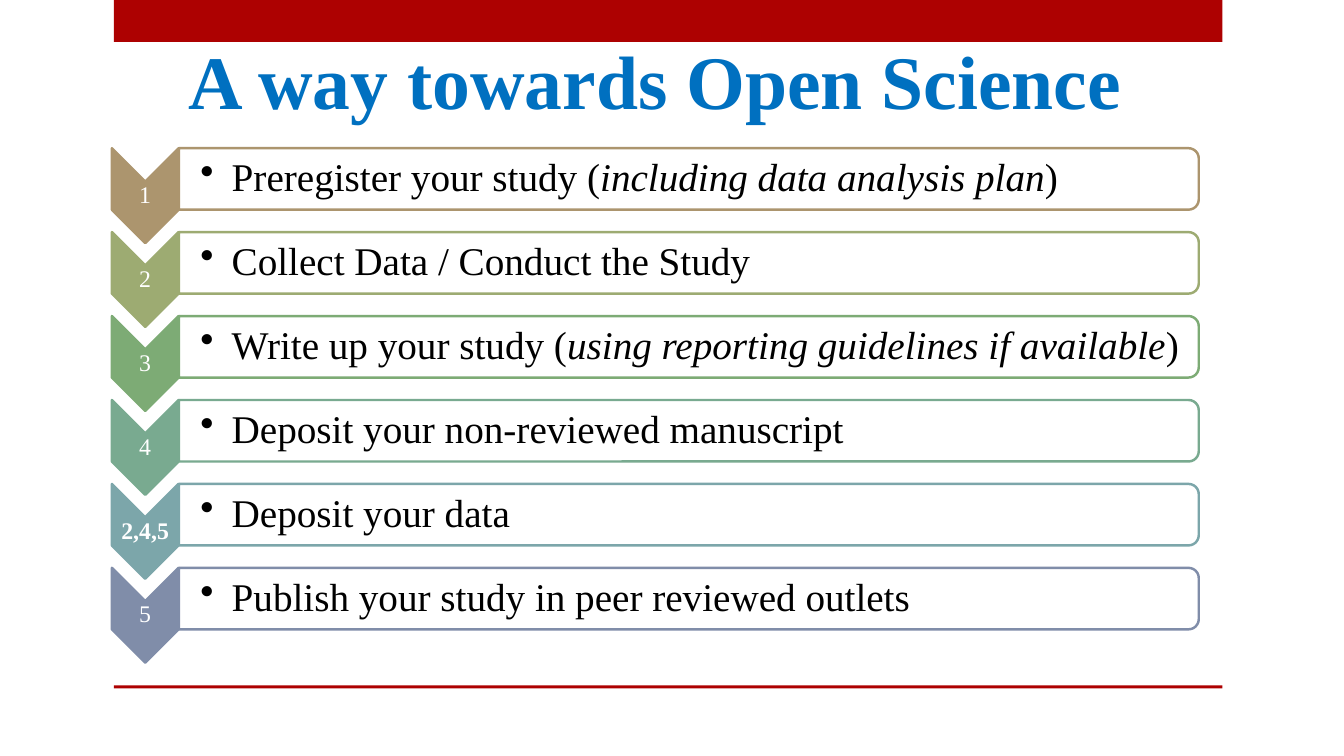
"""Build a slide listing six numbered steps towards open science."""
from dataclasses import dataclass

from lxml import etree
from pptx import Presentation
from pptx.dml.color import RGBColor
from pptx.enum.shapes import MSO_SHAPE
from pptx.enum.text import MSO_ANCHOR, PP_ALIGN
from pptx.oxml.ns import qn
from pptx.util import Cm, Pt

RECTANGLE = MSO_SHAPE.RECTANGLE
CHEVRON = MSO_SHAPE.CHEVRON
ROUNDED_BAR = MSO_SHAPE.ROUND_2_SAME_RECTANGLE
MIDDLE, BOTTOM = MSO_ANCHOR.MIDDLE, MSO_ANCHOR.BOTTOM
LEFT, CENTER = PP_ALIGN.LEFT, PP_ALIGN.CENTER

TITLE = "A way towards Open Science"
STEPS = [
    ("1", "AC956E", ["Preregister your study (", "including data analysis plan", ")"]),
    ("2", "9DAB72", ["Collect Data / Conduct the Study"]),
    ("3", "7DAB75", ["Write up your study (", "using reporting guidelines if available", ")"]),
    ("4", "79AA90", ["Deposit your non-reviewed manuscript"]),
    ("2,4,5", "7CA6AA", ["Deposit your data"]),
    ("5", "808DA9", ["Publish your study in peer reviewed outlets"]),
]


@dataclass(frozen=True)
class Theme:
    font: str = "Times New Roman"
    band: str = "AD0101"
    title: str = "0070C0"
    text: str = "000000"
    light: str = "FFFFFF"
    title_size: float = 54
    step_size: float = 28
    label_size: float = 17
    outline: float = 1.75


THEME = Theme()
FIRST_BAR_CENTER, PITCH = 4.51, 2.115
BAR_CENTER, BAR_LENGTH, BAR_HEIGHT = 17.36, 25.7, 1.55
CHEVRON_CENTER, CHEVRON_LENGTH, CHEVRON_WIDTH, CHEVRON_DROP = 3.66, 2.39, 1.68, 0.42
TEXT_LEFT, TEXT_WIDTH, TEXT_HEIGHT = 4.5, 25.63, 1.4
LABEL_HEIGHT = 0.71
BAND_LEFT, BAND_WIDTH = 2.87, 27.94


def add_block(page, kind, left, top, width, height, fill, line=None, rotation=0):
    block = page.shapes.add_shape(kind, Cm(left), Cm(top), Cm(width), Cm(height))
    block.shadow.inherit = False
    block.rotation = rotation
    block.fill.solid()
    block.fill.fore_color.rgb = RGBColor.from_string(fill)
    if line:
        block.line.color.rgb = RGBColor.from_string(line)
        block.line.width = Pt(THEME.outline)
    else:
        block.line.fill.background()
    return block


def add_upright(page, kind, center_x, center_y, length, width, fill, line):
    return add_block(page, kind, center_x - length / 2, center_y - width / 2,
                     length, width, fill, line, rotation=90)


def add_text(page, parts, left, top, width, height, *, size, color, bold=False,
             align=LEFT, anchor=MIDDLE, insets=(0.03, 0.03), spacing=0.9, bullet=None):
    box = page.shapes.add_textbox(Cm(left), Cm(top), Cm(width), Cm(height))
    frame = box.text_frame
    frame.word_wrap = True
    frame.vertical_anchor = anchor
    frame.margin_left = Cm(insets[0])
    frame.margin_right = frame.margin_top = frame.margin_bottom = Cm(insets[1])
    para = frame.paragraphs[0]
    para.alignment = align
    para.line_spacing = spacing
    if bullet:
        properties = para._p.get_or_add_pPr()
        properties.set("marL", str(Cm(0.79)))
        properties.set("indent", str(-Cm(0.79)))
        etree.SubElement(properties, qn("a:buChar")).set("char", bullet)
    for index, part in enumerate(parts):
        span = para.add_run()
        span.text = part
        span.font.name = THEME.font
        span.font.size = Pt(size)
        span.font.bold = bold
        span.font.italic = index % 2 == 1
        span.font.color.rgb = RGBColor.from_string(color)


def add_step(page, row, label, color, parts):
    center = FIRST_BAR_CENTER + row * PITCH
    label_center = center + CHEVRON_DROP
    add_upright(page, CHEVRON, CHEVRON_CENTER, label_center,
                CHEVRON_LENGTH, CHEVRON_WIDTH, color, color)
    add_text(page, [label], CHEVRON_CENTER - CHEVRON_WIDTH / 2,
             label_center - LABEL_HEIGHT / 2, CHEVRON_WIDTH, LABEL_HEIGHT,
             size=THEME.label_size, color=THEME.light, bold=len(label) > 1, align=CENTER)
    bar = add_upright(page, ROUNDED_BAR, BAR_CENTER, center,
                      BAR_HEIGHT, BAR_LENGTH, THEME.light, color)
    white = bar._element.spPr.find(qn("a:solidFill"))[0]
    etree.SubElement(white, qn("a:alpha")).set("val", "90000")
    add_text(page, parts, TEXT_LEFT, center - TEXT_HEIGHT / 2, TEXT_WIDTH, TEXT_HEIGHT,
             size=THEME.step_size, color=THEME.text, insets=(0.55, 0.05), bullet="•")


def main():
    deck = Presentation()
    deck.slide_width, deck.slide_height = Cm(33.87), Cm(19.05)
    page = deck.slides.add_slide(deck.slide_layouts[6])
    for top, height in [(0, 1.06), (17.27, 0.08)]:
        add_block(page, RECTANGLE, BAND_LEFT, top, BAND_WIDTH, height, THEME.band)
    for row, step in enumerate(STEPS):
        add_step(page, row, *step)
    add_text(page, [TITLE], 0.1, 1.8, 32.82, 1.47, size=THEME.title_size,
             color=THEME.title, bold=True, align=CENTER, anchor=BOTTOM,
             insets=(0.13, 0.13), spacing=1.0)
    deck.save("out.pptx")


if __name__ == "__main__":
    main()
